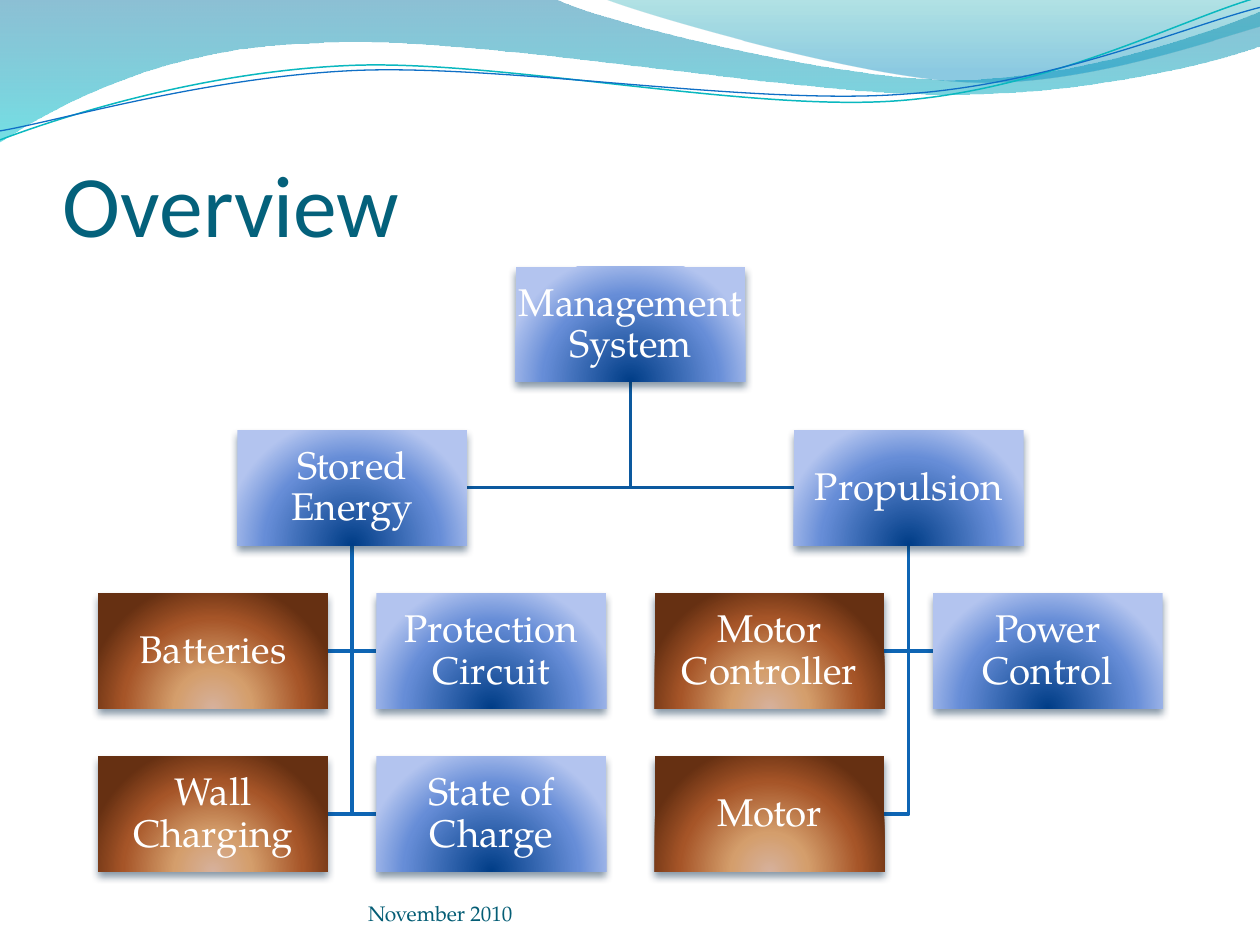
import math
from dataclasses import dataclass

import pptx
import pptx.dml.color
import pptx.enum.shapes
import pptx.enum.text
import pptx.oxml
import pptx.oxml.ns
import pptx.util
from pptx.oxml.ns import qn
from pptx.util import Cm

NAMESPACE = pptx.oxml.ns.nsdecls("a")
SERIF = "TeX Gyre Pagella"
BOX_WIDTH, BOX_HEIGHT = 4.63, 2.32
LEFT, TOP = 1.98, 5.38
COLUMN_STEP, ROW_STEP = 5.61, 3.29

# Gradient stops: position, colour, opacity (percent)
BLUE = [(0, "003D87", 100), (68, "668DD7", 100), (100, "B3C4EF", 100)]
BROWN = [(0, "D6B19C", 100), (30, "D49E6C", 100),
         (70, "A65528", 100), (100, "663012", 100)]
LINEAR_DOWN = '<a:lin ang="5400000" scaled="0"/>'
GLOW_FROM_BELOW = ('<a:path path="circle"><a:fillToRect l="50000" t="130000" '
                   'r="50000" b="-30000"/></a:path>')


@dataclass
class Box:
    text: str
    column: float
    row: int
    stops: list
    parent: str = ""

    @property
    def left(self) -> float:
        return LEFT + self.column * COLUMN_STEP

    @property
    def top(self) -> float:
        return TOP + self.row * ROW_STEP

    @property
    def center(self) -> float:
        return self.left + BOX_WIDTH / 2


@dataclass
class Curve:
    """Segments hold one point (straight) or three (cubic), in cm."""
    start: tuple
    segments: list
    stops: list | None = None
    line: str = ""
    width: float = 0
    tilt: float = 0
    pivot: tuple = (0, 0)


BOXES = [
    Box("Management System", 1.5, 0, BLUE),
    Box("Stored Energy", 0.5, 1, BLUE, "Management System"),
    Box("Batteries", 0, 2, BROWN, "Stored Energy"),
    Box("Protection Circuit", 1, 2, BLUE, "Stored Energy"),
    Box("Wall Charging", 0, 3, BROWN, "Stored Energy"),
    Box("State of Charge", 1, 3, BLUE, "Stored Energy"),
    Box("Propulsion", 2.5, 1, BLUE, "Management System"),
    Box("Motor Controller", 2, 2, BROWN, "Propulsion"),
    Box("Power Control", 3, 2, BLUE, "Propulsion"),
    Box("Motor", 2, 3, BROWN, "Propulsion"),
]

CURVES = [
    Curve((0, 0), [
        [(11.18, -0.03)],
        [(12.09, 0.43), (16.87, 1.6), (19.25, 1.6)],
        [(21.67, 1.6), (24.33, 0.66), (25.4, 0.23)],
        [(25.43, 0.91)],
        [(24.97, 1.12), (22.1, 1.93), (18.95, 1.9)],
        [(15.8, 1.9), (9.7, 0.71), (6.53, 0.86)],
        [(3.28, 0.91), (1.17, 2.11), (-0.03, 2.87)],
        [(0, 0)],
    ], stops=[(0, "0074A1", 45), (100, "00C6CF", 55)]),
    Curve((12.17, -0.03), [
        [(12.93, 0.28), (17.32, 1.57), (19.53, 1.65)],
        [(21.74, 1.75), (24.41, 0.81), (25.4, 0.53)],
        [(25.4, 0)],
        [(12.17, -0.03)],
    ], stops=[(0, "00A1A9", 30), (80, "008BBF", 45)]),
    Curve((0, 2.82), [
        [(1.22, 2.36), (4.01, 1.45), (7.04, 1.32)],
        [(10.03, 1.19), (15.06, 2.26), (18.11, 2.03)],
        [(21.16, 1.8), (23.83, 0.38), (25.35, -0.05)],
    ], line="0AB8BF", width=0.85, tilt=-2.7, pivot=(12.67, 1.46)),
    Curve((0, 2.64), [
        [(1.19, 2.44), (4.17, 1.55), (7.19, 1.42)],
        [(10.24, 1.3), (15.16, 2.13), (18.21, 1.9)],
        [(21.23, 1.7), (23.9, 0.53), (25.4, 0.15)],
    ], line="0F6FC6", width=0.75, tilt=-2.7, pivot=(12.69, 1.5)),
]


def color(value: str) -> pptx.dml.color.RGBColor:
    return pptx.dml.color.RGBColor.from_string(value)


def fill_gradient(shape, stops: list, direction: str) -> None:
    stop_xml = "".join(
        f'<a:gs pos="{position * 1000}"><a:srgbClr val="{value}">'
        f'<a:alpha val="{opacity * 1000}"/></a:srgbClr></a:gs>'
        for position, value, opacity in stops)
    gradient = pptx.oxml.parse_xml(
        f'<a:gradFill {NAMESPACE} rotWithShape="1"><a:gsLst>{stop_xml}</a:gsLst>'
        f'{direction}</a:gradFill>')
    shape.fill.solid()
    properties = shape._element.spPr
    properties.replace(properties.find(qn("a:solidFill")), gradient)


def add_shadow(shape) -> None:
    shape.shadow.inherit = False
    effects = shape._element.spPr.find(qn("a:effectLst"))
    effects.append(pptx.oxml.parse_xml(
        f'<a:outerShdw {NAMESPACE} blurRad="57150" dist="38100" dir="5400000" '
        'rotWithShape="0"><a:srgbClr val="042747"><a:alpha val="48000"/>'
        '</a:srgbClr></a:outerShdw>'))


def rotate(point: tuple, pivot: tuple, degrees: float) -> tuple:
    cosine, sine = math.cos(math.radians(degrees)), math.sin(math.radians(degrees))
    x, y = point[0] - pivot[0], point[1] - pivot[1]
    return pivot[0] + x * cosine - y * sine, pivot[1] + x * sine + y * cosine


def draw_outline(slide, points: list, close: bool, line: str = "", width: float = 0):
    scaled = [(Cm(x), Cm(y)) for x, y in points]
    builder = slide.shapes.build_freeform(*scaled[0])
    builder.add_line_segments(scaled[1:], close=close)
    shape = builder.convert_to_shape()
    shape.shadow.inherit = False
    shape.fill.background()
    if line:
        shape.line.color.rgb = color(line)
        shape.line.width = pptx.util.Pt(width)
    else:
        shape.line.fill.background()
    return shape


def bend_segments(shape, segments: list) -> None:
    """Merge each three-point run of the outline into one cubic curve."""
    lines = iter(list(shape._element.iter(qn("a:lnTo"))))
    for segment in segments:
        first, *others = [next(lines) for _ in segment]
        if others:
            first.tag = qn("a:cubicBezTo")
            for other in others:
                first.append(other[0])
                other.getparent().remove(other)


def draw_curve(slide, curve: Curve) -> None:
    points = [curve.start] + [point for segment in curve.segments for point in segment]
    level = [rotate(point, curve.pivot, -curve.tilt) for point in points]
    shape = draw_outline(slide, level, bool(curve.stops), curve.line, curve.width)
    bend_segments(shape, curve.segments)
    shape.rotation = curve.tilt
    if curve.stops:
        fill_gradient(shape, curve.stops, LINEAR_DOWN)


def draw_branch(slide, parent: Box, child: Box) -> None:
    side = child.left + (BOX_WIDTH if child.column < parent.column else 0)
    middle = child.top + BOX_HEIGHT / 2
    points = [(parent.center, parent.top + BOX_HEIGHT),
              (parent.center, middle), (side, middle)]
    draw_outline(slide, points, False, "0E65B4" if parent.row else "0C599F", 2)


def set_text(shape, text: str, size: float, font: str, value: str,
             anchor: str, margins: tuple = (0, 0, 0, 0)) -> None:
    frame = shape.text_frame
    frame.text = text
    frame.word_wrap = True
    frame.vertical_anchor = pptx.enum.text.MSO_ANCHOR[anchor]
    (frame.margin_left, frame.margin_top,
     frame.margin_right, frame.margin_bottom) = map(Cm, margins)
    run_font = frame.paragraphs[0].runs[0].font
    run_font.size = pptx.util.Pt(size)
    run_font.name = font
    run_font.color.rgb = color(value)


def draw_box(slide, box: Box) -> None:
    shape = slide.shapes.add_shape(
        pptx.enum.shapes.MSO_SHAPE.RECTANGLE,
        Cm(box.left), Cm(box.top), Cm(BOX_WIDTH), Cm(BOX_HEIGHT))
    fill_gradient(shape, box.stops, GLOW_FROM_BELOW)
    shape.line.fill.background()
    add_shadow(shape)
    set_text(shape, box.text, 22, SERIF, "FFFFFF", "MIDDLE", (0.05,) * 4)
    paragraph = shape.text_frame.paragraphs[0]
    paragraph.alignment = pptx.enum.text.PP_ALIGN.CENTER
    paragraph.line_spacing = 0.9


def main() -> None:
    presentation = pptx.Presentation()
    presentation.slide_width, presentation.slide_height = Cm(25.4), Cm(19.05)
    slide = presentation.slides.add_slide(presentation.slide_layouts[6])

    # Waves along the top
    for curve in CURVES:
        draw_curve(slide, curve)

    # Title
    title = slide.shapes.add_textbox(Cm(1.27), Cm(1.96), Cm(22.86), Cm(3.18))
    set_text(title, "Overview", 50, "Calibri", "04617B", "BOTTOM", (0, 0.13, 0, 0))

    # Hierarchy: branches behind boxes
    by_text = {box.text: box for box in BOXES}
    for box in BOXES:
        if box.parent:
            draw_branch(slide, by_text[box.parent], box)
    for box in BOXES:
        draw_box(slide, box)

    # Date
    date = slide.shapes.add_textbox(Cm(7.42), Cm(17.65), Cm(9.32), Cm(1.02))
    set_text(date, "November 2010", 12, SERIF, "045D75", "BOTTOM")

    presentation.save("out.pptx")


if __name__ == "__main__":
    main()
